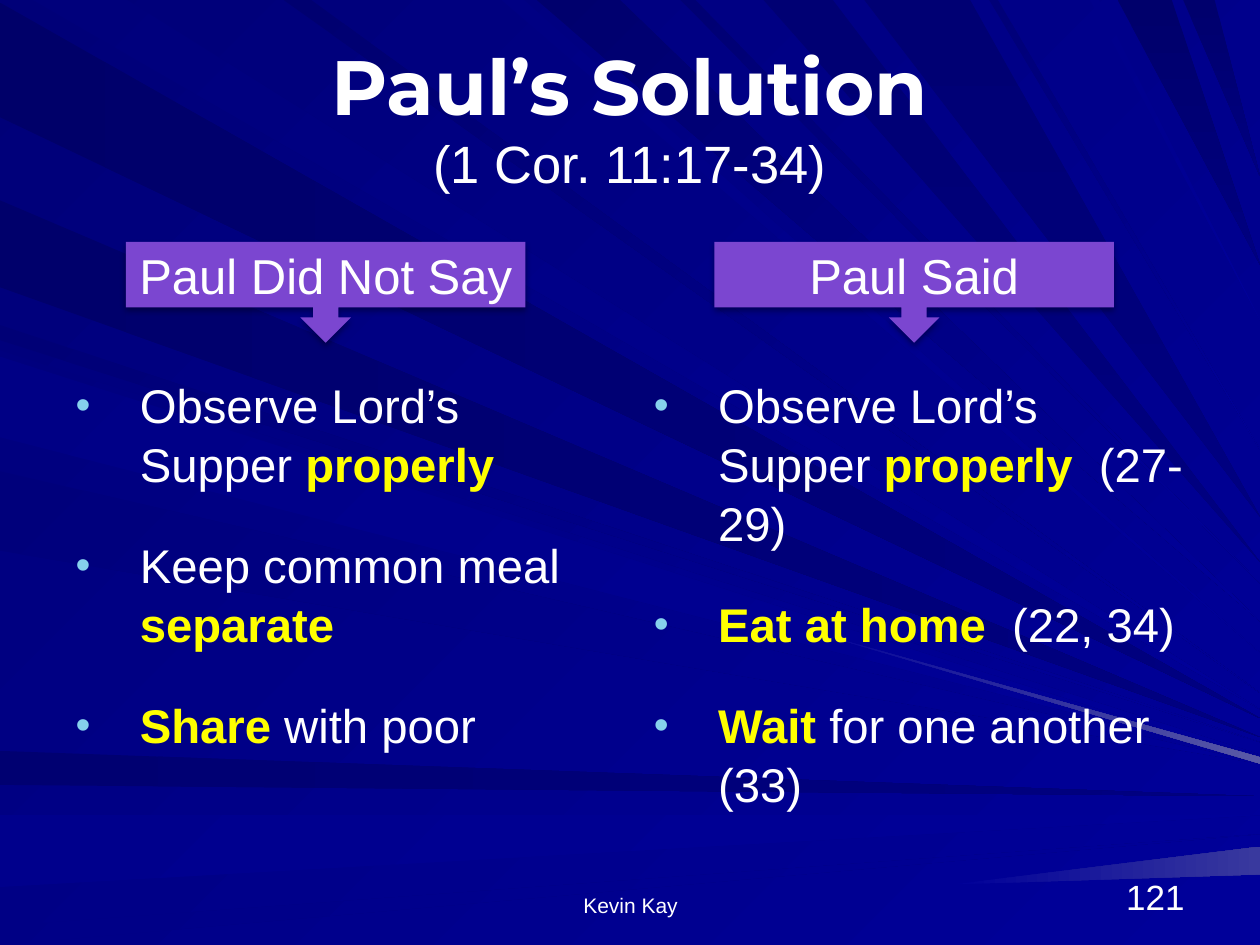
from dataclasses import dataclass

from lxml.etree import SubElement
from pptx import Presentation
from pptx.dml.color import RGBColor
from pptx.enum.shapes import MSO_SHAPE
from pptx.enum.text import MSO_ANCHOR, MSO_AUTO_SIZE, PP_ALIGN
from pptx.oxml.ns import qn
from pptx.util import Pt

PX = 9144  # 100 px to the inch
SLIDE_WIDTH, SLIDE_HEIGHT = 1000, 750


@dataclass(frozen=True)
class Theme:
    white: str = "FFFFFF"
    highlight: str = "FFFF00"
    bullet: str = "86D1EC"
    callout: str = "7B46D0"
    shadow: str = "000000"
    background: str = "000078"
    bright: str = "000099"
    dark: str = "000080"
    title_font: str = "Montserrat"
    font: str = "Arial"
    title_size: int = 44
    subtitle_size: int = 30
    callout_size: int = 28
    body_size: int = 27
    number_size: int = 20
    footer_size: int = 12


THEME = Theme()

# Rays narrow from a span on the left or top edge to a height on the right edge:
# edge, span start, span end, height, start colour, end colour; back to front
RAYS = [
    ("left", 2, 93, 570, "000069", THEME.dark),
    ("top", 26, 101, 563, "00007B", THEME.bright),
    ("left", 596, 623, 632, "000071", THEME.dark),
    ("left", 647, 704, 647, "00008C", THEME.bright),
    ("left", 735, 750, 662, "000085", THEME.bright),
    ("left", 258, 270, 589, "000076", THEME.bright),
    ("left", 159, 228, 585, "00006B", THEME.dark),
    ("top", 398, 416, 518, "000083", THEME.bright),
    ("top", 426, 492, 493, "00006D", THEME.bright),
    ("top", 540, 552, 463, "000073", THEME.bright),
    ("top", 606, 661, 446, "000073", THEME.dark),
    ("top", 887, 930, 210, "00006B", THEME.dark),
    ("top", 939, 964, 140, "00006D", THEME.dark),
    ("left", 278, 342, 599, "00007E", THEME.bright),
    ("left", 374, 437, 606, "00007B", THEME.bright),
    ("top", 225, 247, 550, "000070", THEME.bright),
    ("top", 686, 770, 410, "000073", THEME.dark),
    ("top", 785, 792, 357, "000078", THEME.bright),
    ("top", 865, 872, 254, "00008A", THEME.bright),
    ("left", 283, 347, 604, "000085", THEME.bright),
]

# Glows widen from a tip to a span on the right edge: tip, span, end colour
GLOWS = [
    ((633, 498), (601, 606), "5A5AA6"),
    ((756, 702), (672, 694), "39399E"),
]

# Each column: left edges of callout and list, list height, heading, list items of (text, highlighted) runs
COLUMNS = [
    (100, 50, 317, "Paul Did Not Say", [
        [("Observe Lord’s Supper", False), (" properly", True)],
        [("Keep common meal ", False), ("separate", True)],
        [("Share", True), (" with poor", False)],
    ]),
    (567, 509, 383, "Paul Said", [
        [("Observe Lord’s Supper", False), (" properly", True), ("  (27-29)", False)],
        [("Eat at home", True), ("  (22, 34)", False)],
        [("Wait", True), (" for one another  (33)", False)],
    ]),
]


def px(*lengths):
    return [length * PX for length in lengths]


def fill_gradient(fill, start, end, angle):
    fill.gradient()
    fill.gradient_angle = (360 - angle) % 360
    for stop, color in zip(fill.gradient_stops, (start, end)):
        stop.color.rgb = RGBColor.from_string(color)


def add_run(paragraph, text, size, color=THEME.white, bold=False, font=THEME.font):
    run = paragraph.add_run()
    run.text = text
    run.font.size = Pt(size)
    run.font.name = font
    run.font.bold = bold
    run.font.color.rgb = RGBColor.from_string(color)


def place(shape, left, top, width, height):
    shape.left, shape.top, shape.width, shape.height = px(left, top, width, height)


def add_triangle(group, corners, start, end, angle):
    builder = group.shapes.build_freeform(*corners[0], scale=PX)
    builder.add_line_segments(corners[1:], close=True)
    triangle = builder.convert_to_shape()
    triangle.shadow.inherit = False
    triangle.line.fill.background()
    fill_gradient(triangle.fill, start, end, angle)


def add_rays(slide):
    """Draw the light rays as one group behind the placeholders."""
    group = slide.shapes.add_group_shape()
    for edge, first, last, height, start, end in RAYS:
        base = [(0, first), (0, last)] if edge == "left" else [(first, 0), (last, 0)]
        dark_angle = 0 if edge == "left" else 90
        angle = dark_angle if end == THEME.dark else 45
        add_triangle(group, base + [(SLIDE_WIDTH, height)], start, end, angle)
    for tip, span, end in GLOWS:
        corners = [tip] + [(SLIDE_WIDTH, height) for height in span]
        add_triangle(group, corners, THEME.bright, end, 0)
    slide.shapes.title.element.addprevious(group.element)


def fill_title(title):
    place(title, 50, 30, 900, 125)
    frame = title.text_frame
    frame.auto_size = MSO_AUTO_SIZE.NONE
    frame.vertical_anchor = MSO_ANCHOR.MIDDLE
    paragraph = frame.paragraphs[0]
    paragraph.alignment = PP_ALIGN.CENTER
    add_run(paragraph, "Paul’s Solution", THEME.title_size, bold=True, font=THEME.title_font)
    paragraph.add_line_break()
    add_run(paragraph, "(1 Cor. 11:17-34)", THEME.subtitle_size)


def add_bullet(paragraph):
    properties = paragraph._p.get_or_add_pPr()
    properties.set("marL", str(51 * PX))
    properties.set("indent", str(-51 * PX))
    color = SubElement(properties, qn("a:buClr"))
    SubElement(color, qn("a:srgbClr"), val=THEME.bullet)
    SubElement(properties, qn("a:buSzPct"), val="90000")
    SubElement(properties, qn("a:buFont"), typeface=THEME.font)
    SubElement(properties, qn("a:buChar"), char="•")


def fill_list(body, left, height, items):
    place(body, left, 292, 441, height)
    frame = body.text_frame
    frame.auto_size = MSO_AUTO_SIZE.NONE
    for index, runs in enumerate(items):
        paragraph = frame.add_paragraph() if index else frame.paragraphs[0]
        add_bullet(paragraph)
        paragraph.line_spacing = 1.04
        paragraph.space_before = Pt(0)
        paragraph.space_after = Pt(24)
        for text, highlighted in runs:
            color = THEME.highlight if highlighted else THEME.white
            add_run(paragraph, text, THEME.body_size, color, highlighted)


def add_soft_shadow(shape):
    shape.shadow.inherit = False
    effects = shape.element.spPr.find(qn("a:effectLst"))
    shadow = SubElement(effects, qn("a:outerShdw"), blurRad=str(Pt(3.5)), dist=str(Pt(2.2)),
                        dir="5400000", rotWithShape="0")
    color = SubElement(shadow, qn("a:srgbClr"), val=THEME.shadow)
    SubElement(color, qn("a:alpha"), val="32000")


def add_callout(slide, left, heading):
    callout = slide.shapes.add_shape(MSO_SHAPE.DOWN_ARROW_CALLOUT, *px(left, 192, 317, 80))
    callout.fill.solid()
    callout.fill.fore_color.rgb = RGBColor.from_string(THEME.callout)
    callout.line.fill.background()
    add_soft_shadow(callout)
    frame = callout.text_frame
    frame.margin_left = frame.margin_right = 0
    frame.vertical_anchor = MSO_ANCHOR.MIDDLE
    paragraph = frame.paragraphs[0]
    paragraph.alignment = PP_ALIGN.CENTER
    add_run(paragraph, heading, THEME.callout_size)


def add_footer_text(slide, left, width, text, size, alignment):
    frame = slide.shapes.add_textbox(*px(left, 683, width, 50)).text_frame
    frame.word_wrap = True
    frame.vertical_anchor = MSO_ANCHOR.BOTTOM
    paragraph = frame.paragraphs[0]
    paragraph.alignment = alignment
    add_run(paragraph, text, size)


def main():
    presentation = Presentation()
    presentation.slide_width, presentation.slide_height = px(SLIDE_WIDTH, SLIDE_HEIGHT)
    slide = presentation.slides.add_slide(presentation.slide_layouts.get_by_name("Two Content"))
    fill_gradient(slide.background.fill, THEME.background, THEME.bright, 45)
    add_rays(slide)
    title, *bodies = slide.placeholders
    fill_title(title)
    for body, (callout_left, list_left, height, heading, items) in zip(bodies, COLUMNS):
        fill_list(body, list_left, height, items)
        add_callout(slide, callout_left, heading)
    add_footer_text(slide, 342, 317, "Kevin Kay", THEME.footer_size, PP_ALIGN.CENTER)
    add_footer_text(slide, 717, 233, "121", THEME.number_size, PP_ALIGN.RIGHT)
    presentation.save("out.pptx")


if __name__ == "__main__":
    main()
